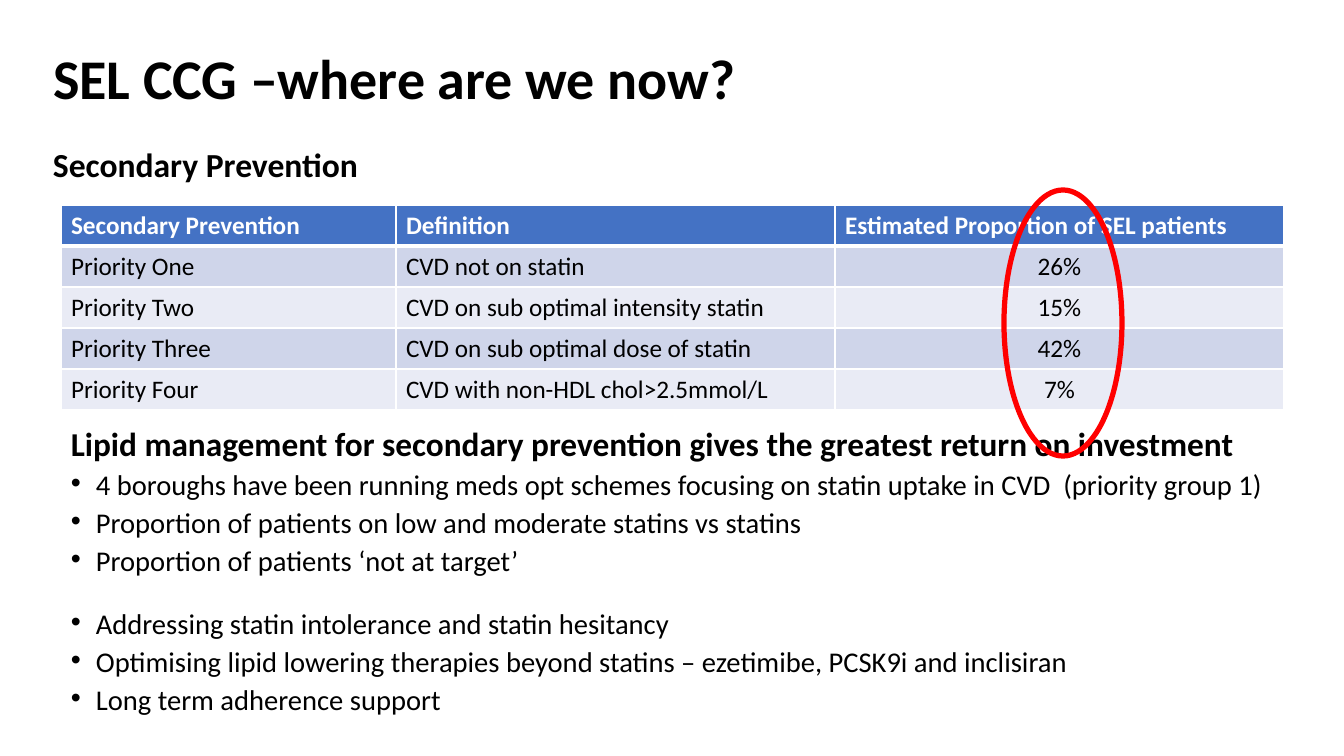
from dataclasses import dataclass

from lxml.etree import SubElement
from pptx import Presentation
from pptx.dml.color import RGBColor
from pptx.enum.shapes import MSO_SHAPE
from pptx.enum.text import MSO_ANCHOR, MSO_AUTO_SIZE, PP_ALIGN
from pptx.oxml.ns import qn
from pptx.util import Pt

SLIDE_WIDTH, SLIDE_HEIGHT = 1344, 756
EMU_PER_PX = 12192000 / SLIDE_WIDTH


@dataclass(frozen=True)
class Theme:
    font: str = "Calibri"
    text: str = "000000"
    light: str = "FFFFFF"
    header: str = "4472C4"
    bands: tuple = ("CFD5EA", "E9EBF5")
    highlight: str = "FF0000"
    title_size: float = 40
    heading_size: float = 24
    lead_size: float = 23.8
    bullet_size: float = 20.4
    table_size: float = 18


THEME = Theme()

PRIORITIES = [
    ("Secondary Prevention", "Definition", "Estimated Proportion of SEL patients"),
    ("Priority One", "CVD not on statin", "26%"),
    ("Priority Two", "CVD on sub optimal intensity statin", "15%"),
    ("Priority Three", "CVD on sub optimal dose of statin", "42%"),
    ("Priority Four", "CVD with non-HDL chol>2.5mmol/L", "7%"),
]
COLUMN_WIDTHS = (335, 439, 449)

LEAD = "Lipid management for secondary prevention gives the greatest return on investment"
CURRENT_WORK = [
    "4 boroughs have been running meds opt schemes focusing on statin uptake in CVD  (priority group 1)",
    "Proportion of patients on low and moderate statins vs statins",
    "Proportion of patients ‘not at target’",
]
NEXT_STEPS = [
    "Addressing statin intolerance and statin hesitancy",
    "Optimising lipid lowering therapies beyond statins – ezetimibe, PCSK9i and inclisiran",
    "Long term adherence support",
]


def px(length):
    return round(length * EMU_PER_PX)


def place(shape, box):
    shape.left, shape.top, shape.width, shape.height = map(px, box)


def format_runs(paragraph, size, color=THEME.text, bold=False):
    for run in paragraph.runs:
        run.font.name = THEME.font
        run.font.size = Pt(size)
        run.font.bold = bold
        run.font.color.rgb = RGBColor.from_string(color)


def add_title(slide, box):
    title = slide.shapes.title
    place(title, box)
    frame = title.text_frame
    frame.text = "SEL CCG –where are we now?"
    frame.auto_size = MSO_AUTO_SIZE.NONE
    frame.vertical_anchor = MSO_ANCHOR.TOP
    frame.margin_top = px(11)
    paragraph = frame.paragraphs[0]
    paragraph.alignment = PP_ALIGN.LEFT
    paragraph.line_spacing = 0.9
    format_runs(paragraph, THEME.title_size, bold=True)


def add_heading(slide, box):
    frame = slide.shapes.add_textbox(*map(px, box)).text_frame
    frame.word_wrap = True
    frame.text = "Secondary Prevention"
    format_runs(frame.paragraphs[0], THEME.heading_size, bold=True)


def set_borders(cell, bottom_width):
    properties = cell._tc.get_or_add_tcPr()
    for side, width in (("L", 1), ("R", 1), ("T", 1), ("B", bottom_width)):
        line = SubElement(properties, qn(f"a:ln{side}"), w=str(Pt(width)))
        fill = SubElement(line, qn("a:solidFill"))
        SubElement(fill, qn("a:srgbClr"), val=THEME.light)


def add_priority_table(slide, box):
    table = slide.shapes.add_table(
        len(PRIORITIES), len(COLUMN_WIDTHS), *map(px, box)
    ).table
    table.horz_banding = False
    for column, width in zip(table.columns, COLUMN_WIDTHS):
        column.width = px(width)
    for row_index, values in enumerate(PRIORITIES):
        is_header = row_index == 0
        table.rows[row_index].height = px(box[3] / len(PRIORITIES))
        background = THEME.header if is_header else THEME.bands[(row_index - 1) % 2]
        for column_index, value in enumerate(values):
            cell = table.cell(row_index, column_index)
            cell.text = value
            set_borders(cell, 3 if is_header else 1)
            cell.fill.solid()
            cell.fill.fore_color.rgb = RGBColor.from_string(background)
            paragraph = cell.text_frame.paragraphs[0]
            if column_index == 2 and not is_header:
                paragraph.alignment = PP_ALIGN.CENTER
            color = THEME.light if is_header else THEME.text
            format_runs(paragraph, THEME.table_size, color, is_header)


def add_bullet(paragraph):
    properties = paragraph._p.get_or_add_pPr()
    properties.set("marL", str(px(25)))
    properties.set("indent", str(px(-25)))
    SubElement(properties, qn("a:buFont"), typeface="Arial")
    SubElement(properties, qn("a:buChar"), char="•")


def add_actions(slide, box):
    frame = slide.shapes.add_textbox(*map(px, box)).text_frame
    frame.word_wrap = True
    frame.text = LEAD
    frame.paragraphs[0].line_spacing = 0.7
    format_runs(frame.paragraphs[0], THEME.lead_size, bold=True)
    for group, first_gap in ((CURRENT_WORK, 10), (NEXT_STEPS, 28)):
        for index, text in enumerate(group):
            paragraph = frame.add_paragraph()
            paragraph.text = text
            paragraph.line_spacing = 0.7
            paragraph.space_before = Pt(first_gap if index == 0 else 10)
            add_bullet(paragraph)
            format_runs(paragraph, THEME.bullet_size)


def add_highlight(slide, box):
    ellipse = slide.shapes.add_shape(MSO_SHAPE.OVAL, *map(px, box))
    ellipse.shadow.inherit = False
    ellipse.fill.background()
    ellipse.line.color.rgb = RGBColor.from_string(THEME.highlight)
    ellipse.line.width = Pt(3.75)


def main():
    presentation = Presentation()
    presentation.slide_width = px(SLIDE_WIDTH)
    presentation.slide_height = px(SLIDE_HEIGHT)
    slide = presentation.slides.add_slide(
        presentation.slide_layouts.get_by_name("Title Only")
    )
    add_title(slide, (43, 40, 1159, 146))
    add_heading(slide, (43, 139, 363, 50))
    add_actions(slide, (61, 429, 1223, 298))
    add_priority_table(slide, (61, 205, sum(COLUMN_WIDTHS), 205))
    add_highlight(slide, (1004, 190, 118, 266))
    presentation.save("out.pptx")


if __name__ == "__main__":
    main()
